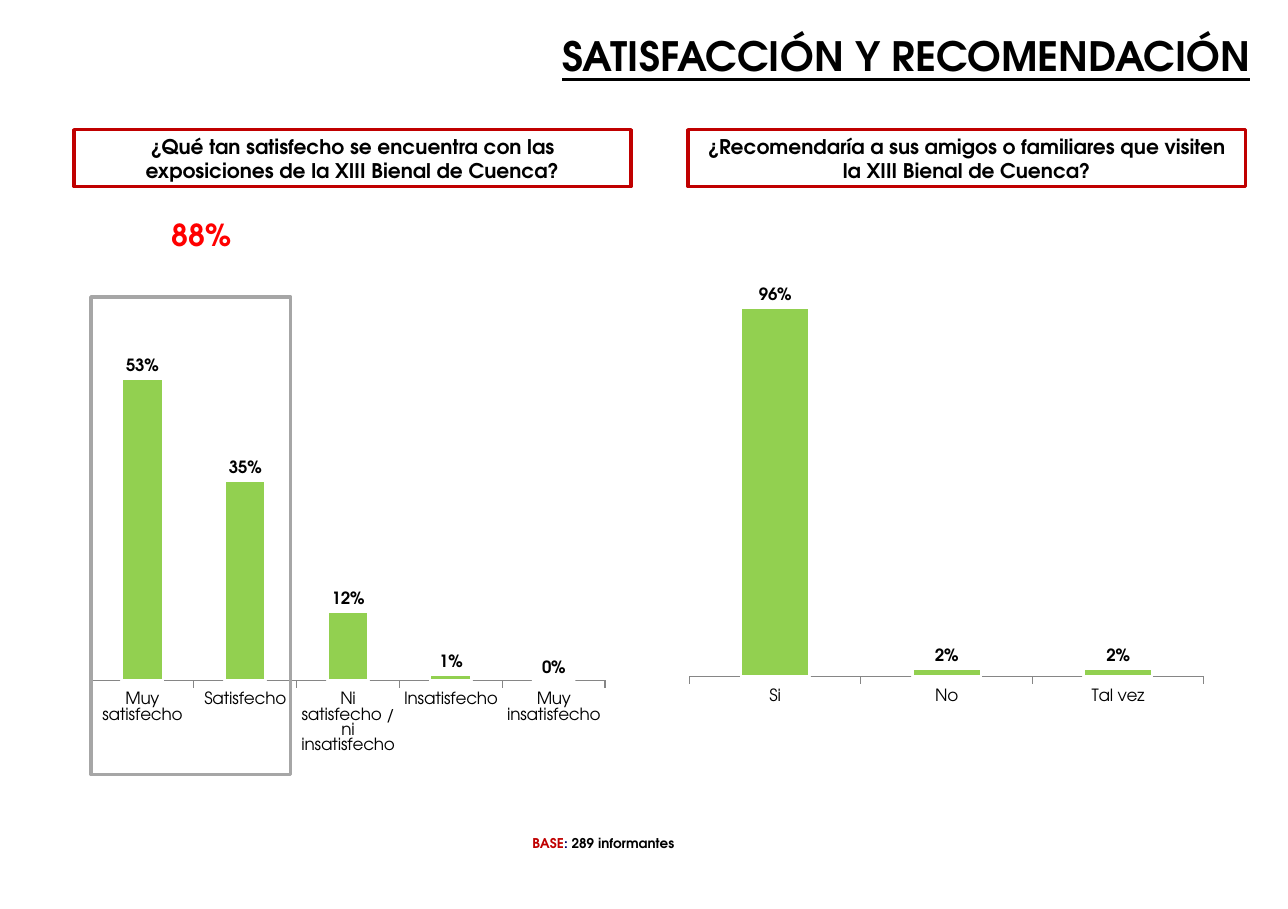
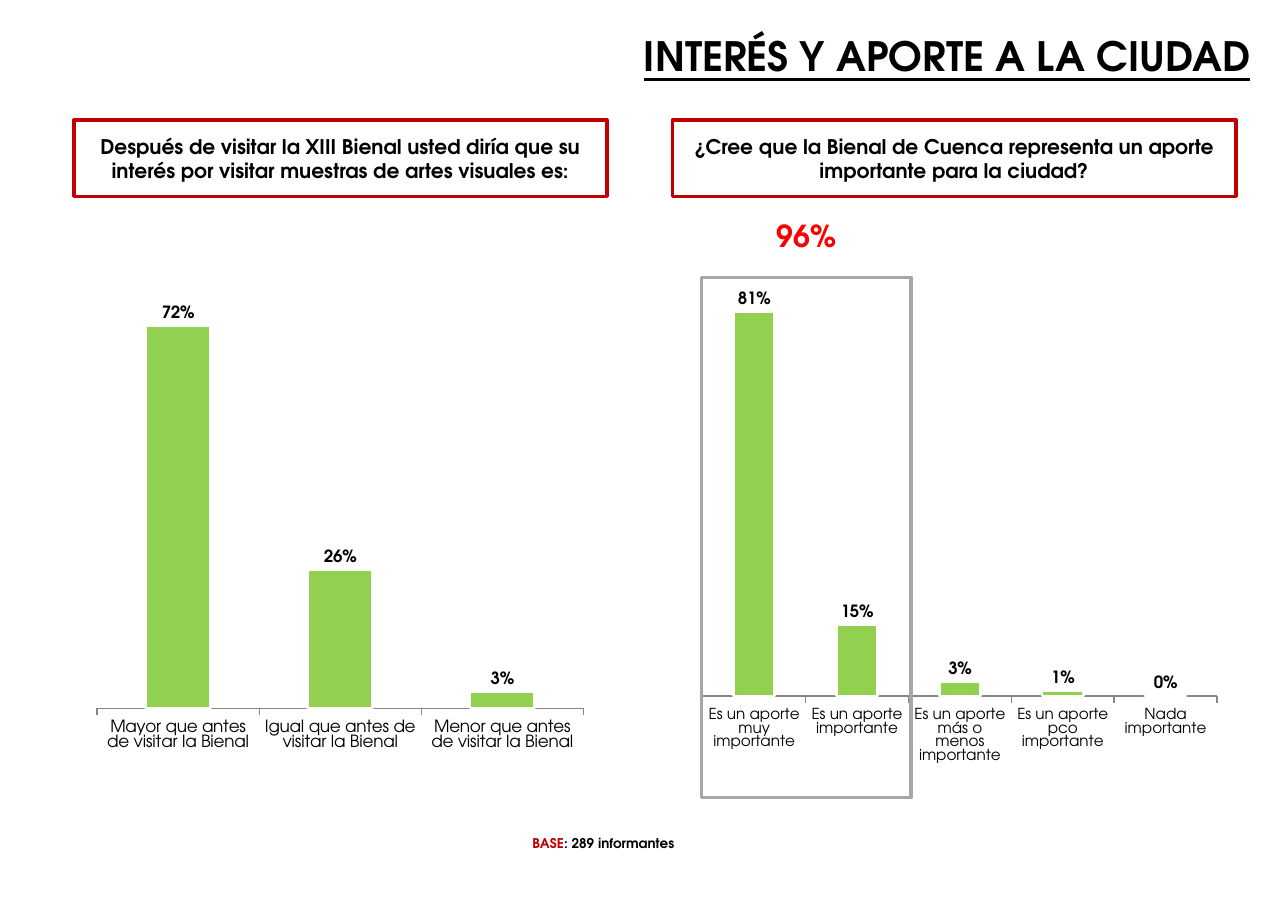
from lxml.etree import SubElement
from pptx import Presentation
from pptx.chart.data import CategoryChartData
from pptx.dml.color import RGBColor
from pptx.enum.chart import XL_CHART_TYPE, XL_LABEL_POSITION, XL_TICK_MARK
from pptx.enum.shapes import MSO_SHAPE
from pptx.enum.text import MSO_ANCHOR, MSO_AUTO_SIZE, PP_ALIGN
from pptx.oxml.ns import qn
from pptx.util import Pt

PX = 9144
FONT = "TeX Gyre Adventor"
BLACK, WHITE, RED, BRIGHT_RED = "000000", "FFFFFF", "C00000", "FF0000"
GREEN, GRAY, AXIS_GRAY, NAVY = "92D050", "A6A6A6", "868686", "00006A"

SLIDES = [
    ("SATISFACCIÓN Y RECOMENDACIÓN", [
        dict(origin=(61, 107), heading=(460, 47),
             question="¿Qué tan satisfecho se encuentra con las exposiciones "
                      "de la XIII Bienal de Cuenca?",
             chart=(0, 71, 452, 480), plot=(0.031, 0.212, 0.939, 0.587),
             values={"Muy insatisfecho": 0, "Insatisfecho": 0.01,
                     "Ni satisfecho / ni insatisfecho": 0.12,
                     "Satisfecho": 0.35, "Muy satisfecho": 0.53},
             top=0.6, reverse=True,
             frame=(14, 138, 165, 394), total="88%", total_box=(70, 71, 71, 31)),
        dict(origin=(568, 107), heading=(460, 47),
             question="¿Recomendaría a sus amigos o familiares que visiten "
                      "la XIII Bienal de Cuenca?",
             chart=(-13, 55, 452, 496), plot=(0.031, 0.033, 0.939, 0.766),
             values={"Si": 0.96, "No": 0.02, "Tal vez": 0.02}, top=1.2),
    ]),
    ("INTERÉS Y APORTE A LA CIUDAD", [
        dict(origin=(61, 99), heading=(440, 63),
             question="Después de visitar la XIII Bienal usted diría que su "
                      "interés por visitar muestras de artes visuales es:",
             chart=(4, 96, 432, 441), plot=(0.035, 0.088, 0.929, 0.795),
             values={"Mayor que antes de visitar la Bienal": 0.72,
                     "Igual que antes de visitar la Bienal": 0.26,
                     "Menor que antes de visitar la Bienal": 0.03}, top=0.8),
        dict(origin=(555, 99), heading=(465, 63),
             question="¿Cree que la Bienal de Cuenca representa un aporte "
                      "importante para la ciudad?",
             chart=(11, 79, 452, 496), plot=(0.031, 0.088, 0.939, 0.711),
             values={"Nada importante": 0, "Es un aporte pco importante": 0.01,
                     "Es un aporte más o menos importante": 0.03,
                     "Es un aporte importante": 0.15,
                     "Es un aporte muy importante": 0.81},
             top=0.9, reverse=True, label_size=9,
             frame=(24, 130, 173, 429), total="96%", total_box=(75, 80, 71, 31)),
    ]),
]


def rgb(color):
    return RGBColor.from_string(color)


def emu(box):
    return [n * PX for n in box]


def style(target, **values):
    for name, value in values.items():
        setattr(target, name, value)


def set_font(font, size, color=BLACK, **more):
    style(font, name=FONT, size=Pt(size), **more)
    font.color.rgb = rgb(color)


def write(sp, runs, size, align=PP_ALIGN.CENTER, anchor=MSO_ANCHOR.MIDDLE,
          wrap=True, **more):
    tf = sp.text_frame
    style(tf, word_wrap=wrap, auto_size=MSO_AUTO_SIZE.NONE, vertical_anchor=anchor)
    p = tf.paragraphs[0]
    p.alignment = align
    for text, color in runs:
        r = p.add_run()
        r.text = text
        set_font(r.font, size, color, bold=True, **more)


def add_outline(s, box, color):
    sp = s.shapes.add_shape(MSO_SHAPE.RECTANGLE, *emu(box))
    sp.shadow.inherit = False
    sp.fill.background()
    sp.line.color.rgb = rgb(color)
    sp.line.width = Pt(2)
    return sp


def set_plot_area(chart, plot):
    area = chart._chartSpace.chart.plotArea
    for old in area.findall(qn("c:layout")):
        area.remove(old)
    layout = SubElement(area, qn("c:layout"))
    area.insert(0, layout)
    manual = SubElement(layout, qn("c:manualLayout"))
    settings = dict(layoutTarget="inner", xMode="edge", yMode="edge",
                    **dict(zip("xywh", plot)))
    for tag, value in settings.items():
        SubElement(manual, qn("c:" + tag)).set("val", str(value))


def add_bars(s, box, values, plot, top, reverse, label_size):
    data = CategoryChartData(number_format="0%")
    data.categories = list(values)
    data.add_series("Series 1", list(values.values()))
    chart = s.shapes.add_chart(XL_CHART_TYPE.COLUMN_CLUSTERED, *emu(box), data).chart
    style(chart, has_legend=False, has_title=False)
    set_font(chart.font, 10)
    set_plot_area(chart, plot)

    style(chart.value_axis, minimum_scale=0, maximum_scale=top,
          has_major_gridlines=False, visible=False)
    axis = chart.category_axis
    style(axis, major_tick_mark=XL_TICK_MARK.OUTSIDE, reverse_order=reverse)
    axis.format.line.color.rgb = rgb(AXIS_GRAY)
    axis.format.line.width = Pt(0.75)
    set_font(axis.tick_labels.font, label_size)

    bars = chart.plots[0]
    style(bars, gap_width=150, vary_by_categories=False, has_data_labels=True)
    labels = bars.data_labels
    style(labels, show_value=True, number_format="0%",
          number_format_is_linked=False, position=XL_LABEL_POSITION.OUTSIDE_END)
    set_font(labels.font, 10, bold=True)
    series = bars.series[0]
    series.invert_if_negative = False
    series.format.fill.solid()
    series.format.fill.fore_color.rgb = rgb(GREEN)
    series.format.line.color.rgb = rgb(WHITE)
    series.format.line.width = Pt(1.5)


def add_panel(s, origin, heading, question, chart, plot, values, top,
              reverse=False, label_size=10, frame=None, total=None, total_box=None):
    def place(box):
        return (origin[0] + box[0], origin[1] + box[1], *box[2:])

    add_bars(s, place(chart), values, plot, top, reverse, label_size)
    write(add_outline(s, (*origin, *heading), RED), [(question, BLACK)], 12)
    if frame:
        add_outline(s, place(frame), GRAY)
        write(s.shapes.add_textbox(*emu(place(total_box))),
              [(total, BRIGHT_RED)], 18, wrap=False)


def add_title(s, text):
    sp = s.shapes.title
    style(sp, **dict(zip(("left", "top", "width", "height"), emu((20, 21, 1022, 50)))))
    write(sp, [(text, BLACK)], 24, PP_ALIGN.RIGHT, MSO_ANCHOR.TOP, underline=True)


def add_base(s):
    sp = s.shapes.add_textbox(*emu((412, 684, 172, 24)))
    write(sp, [("BASE", RED), (": ", NAVY), ("289 informantes", BLACK)], 8,
          anchor=MSO_ANCHOR.TOP)


def main():
    prs = Presentation()
    style(prs, slide_width=1063 * PX, slide_height=750 * PX)
    for title, panels in SLIDES:
        s = prs.slides.add_slide(prs.slide_layouts[5])
        add_title(s, title)
        for panel in panels:
            add_panel(s, **panel)
        add_base(s)
    prs.save("out.pptx")


if __name__ == "__main__":
    main()
